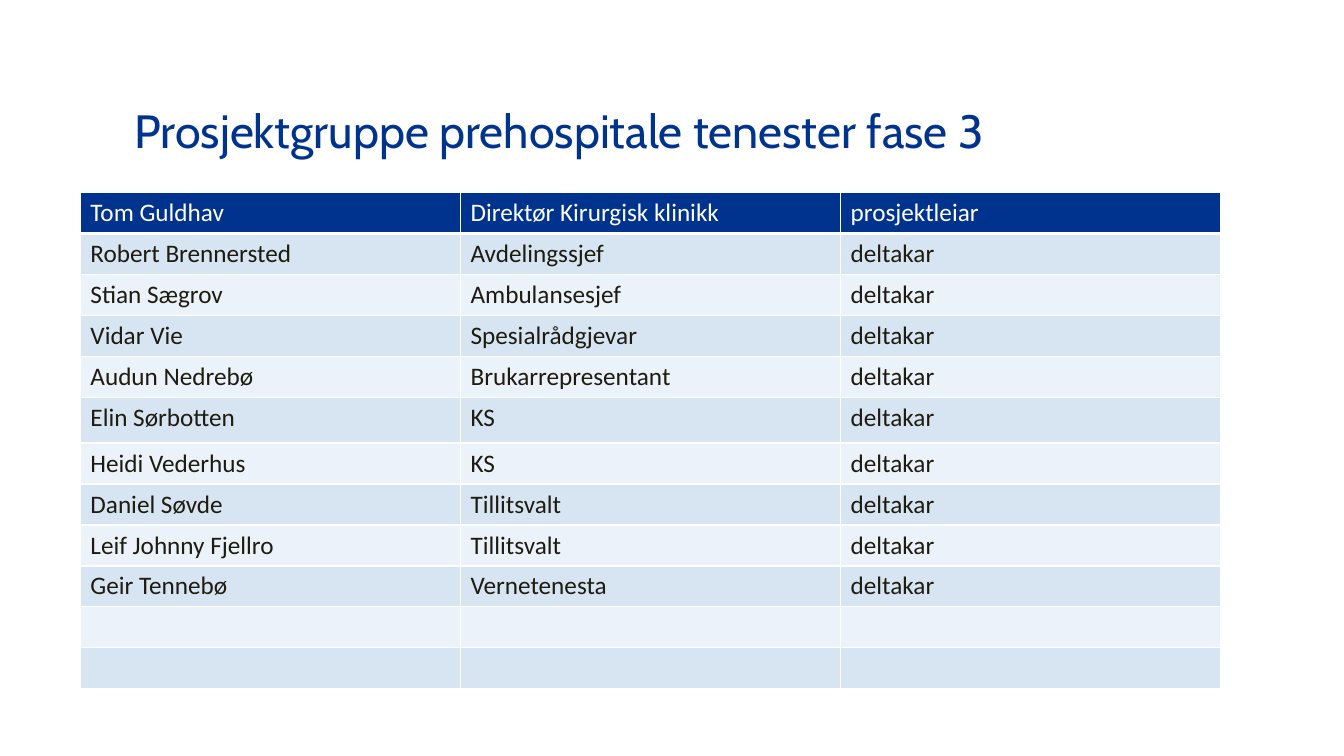
from lxml.etree import SubElement
from pptx import Presentation
from pptx.dml.color import RGBColor
from pptx.enum.text import MSO_ANCHOR, PP_ALIGN
from pptx.oxml.ns import qn
from pptx.util import Inches, Pt

TITLE = "Prosjektgruppe prehospitale tenester fase 3"
LEADER = ("Tom Guldhav", "Direktør Kirurgisk klinikk", "prosjektleiar")
PARTICIPANTS = [
    ("Robert Brennersted", "Avdelingssjef"),
    ("Stian Sægrov", "Ambulansesjef"),
    ("Vidar Vie", "Spesialrådgjevar"),
    ("Audun Nedrebø", "Brukarrepresentant"),
    ("Elin Sørbotten", "KS"),
    ("Heidi Vederhus", "KS"),
    ("Daniel Søvde", "Tillitsvalt"),
    ("Leif Johnny Fjellro", "Tillitsvalt"),
    ("Geir Tennebø", "Vernetenesta"),
]
EMPTY_ROWS = 2
TALL_ROW = 5


def color(value):
    return RGBColor.from_string(value)


def write(text_frame, text, *, font, size, fill, align=PP_ALIGN.LEFT):
    paragraph = text_frame.paragraphs[0]
    paragraph.alignment = align
    run = paragraph.add_run()
    run.text = text
    run.font.name = font
    run.font.size = Pt(size)
    run.font.bold = False
    run.font.color.rgb = color(fill)


class SlideBuilder:
    """Draw styled elements placed in percent of the slide's size."""

    blue = "00338D"
    white = "FFFFFF"
    ink = "1E1C11"
    bands = ("ECF2F9", "D7E4F2")

    def __init__(self, presentation):
        self.width = presentation.slide_width
        self.height = presentation.slide_height
        self.slide = presentation.slides.add_slide(presentation.slide_layouts[6])

    def across(self, percent):
        return round(self.width * percent / 100)

    def down(self, percent):
        return round(self.height * percent / 100)

    def box(self, left, top, width, height):
        return self.across(left), self.down(top), self.across(width), self.down(height)

    def title(self, text, *place):
        text_frame = self.slide.shapes.add_textbox(*self.box(*place)).text_frame
        text_frame.word_wrap = True
        text_frame.vertical_anchor = MSO_ANCHOR.MIDDLE
        write(text_frame, text, font="Cabin", size=33.3, fill=self.blue,
              align=PP_ALIGN.CENTER)

    def border(self, cell, side, points):
        properties = cell._tc.get_or_add_tcPr()
        line = SubElement(properties, qn(f"a:ln{side}"), w=str(Pt(points)))
        solid = SubElement(line, qn("a:solidFill"))
        SubElement(solid, qn("a:srgbClr"), val=self.white)

    def cell(self, cell, text, row):
        header = row == 0
        widths = {"L": 1, "R": 1, "T": 3 if row == 1 else 1, "B": 3 if header else 1}
        for side, points in widths.items():
            self.border(cell, side, points)
        cell.fill.solid()
        cell.fill.fore_color.rgb = color(self.blue if header else self.bands[row % 2])
        if text:
            write(cell.text_frame, text, font="Calibri", size=18,
                  fill=self.white if header else self.ink)

    def table(self, rows, left, top, width, row_height, tall_height):
        columns = len(rows[0])
        frame = self.slide.shapes.add_table(
            len(rows), columns,
            *self.box(left, top, width, row_height * (len(rows) - 1) + tall_height))
        table = frame.table
        table.first_row = table.horz_banding = False
        for column in table.columns:
            column.width = self.across(width / columns)
        for index, texts in enumerate(rows):
            height = tall_height if index == TALL_ROW else row_height
            table.rows[index].height = self.down(height)
            for column, text in enumerate(texts):
                self.cell(table.cell(index, column), text, index)


def main():
    presentation = Presentation()
    presentation.slide_width = Inches(13.33)
    presentation.slide_height = Inches(7.5)
    builder = SlideBuilder(presentation)
    builder.title(TITLE, 5.93, 11.87, 71.42, 10.53)
    members = [(name, position, "deltakar") for name, position in PARTICIPANTS]
    rows = [LEADER, *members, *[("", "", "")] * EMPTY_ROWS]
    builder.table(rows, left=5.98, top=25.47, width=84.85, row_height=5.42,
                  tall_height=6.05)
    presentation.save("out.pptx")


if __name__ == "__main__":
    main()
